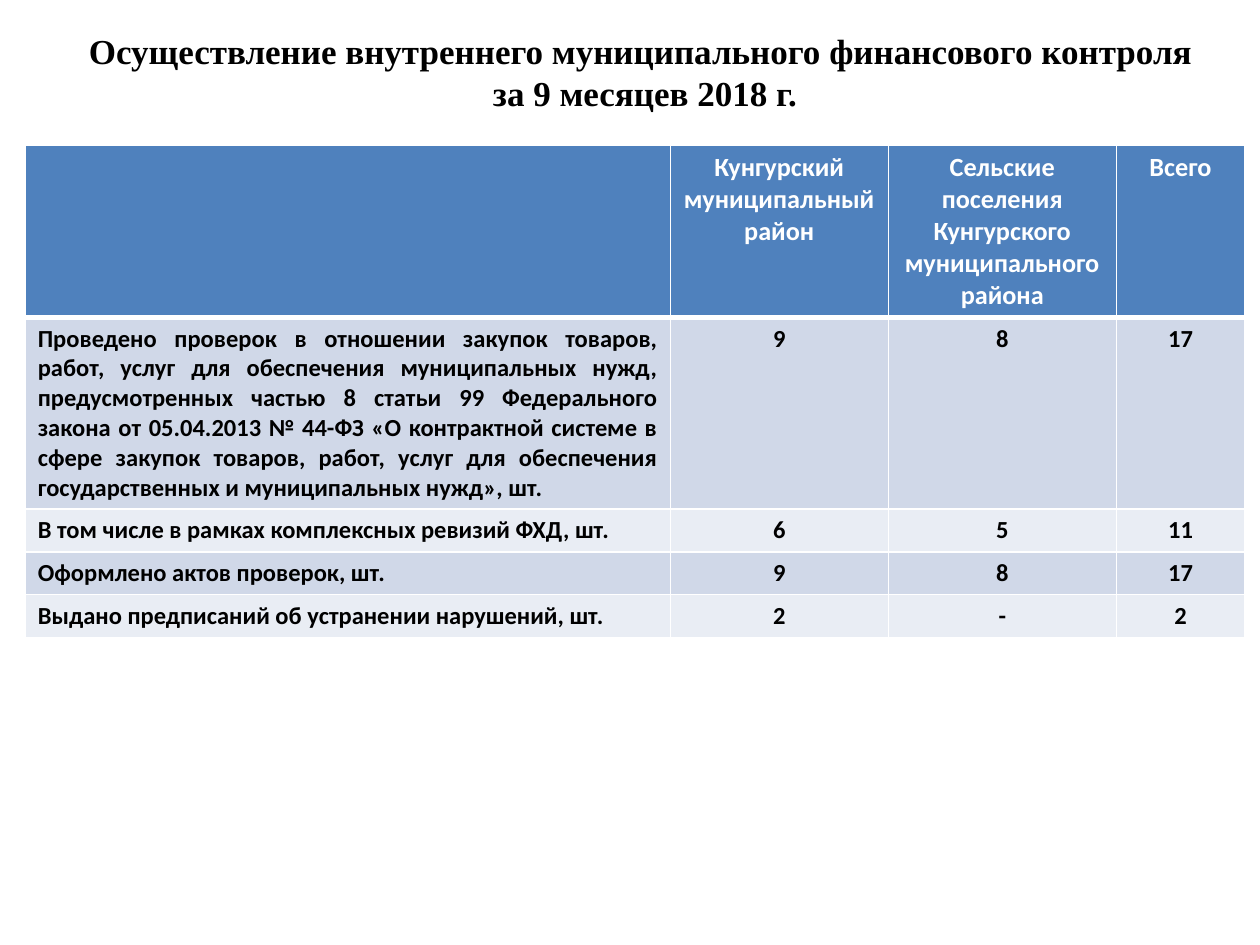
from lxml import etree
from pptx import Presentation
from pptx.dml.color import RGBColor
from pptx.enum import text
from pptx.oxml import ns
from pptx.util import Inches, Pt

WHITE = RGBColor(0xFF, 0xFF, 0xFF)
BLACK = RGBColor(0, 0, 0)
BLUE = RGBColor(0x4F, 0x81, 0xBD)
BANDS = [RGBColor(0xD0, 0xD8, 0xE8), RGBColor(0xE9, 0xED, 0xF4)]
ALIGN = text.PP_ALIGN

TITLE = "Осуществление внутреннего муниципального финансового контроля \vза 9 месяцев 2018 г."
ROWS = [
    ("", "Кунгурский муниципальный район",
     "Сельские поселения Кунгурского муниципального района", "Всего"),
    ("Проведено проверок в отношении закупок товаров, работ, услуг для обеспечения "
     "муниципальных нужд, предусмотренных частью 8 статьи 99 Федерального закона "
     "от 05.04.2013 № 44-ФЗ «О контрактной системе в сфере закупок товаров, работ, "
     "услуг для обеспечения государственных и муниципальных нужд», шт.", "9", "8", "17"),
    ("В том числе в рамках комплексных ревизий ФХД, шт.", "6", "5", "11"),
    ("Оформлено актов проверок, шт.", "9", "8", "17"),
    ("Выдано предписаний об устранении нарушений, шт.", "2", "-", "2"),
]
WIDTHS = [5.12, 1.73, 1.81, 1.02]
HEIGHTS = [1.37, 1.52, 0.34, 0.34, 0.34]


def style(p, font, size, color, align):
    p.alignment = align
    p.font.name = font
    p.font.size = Pt(size)
    p.font.bold = True
    p.font.color.rgb = color


def add_borders(cell, bottom):
    tcPr = cell._tc.get_or_add_tcPr()
    for i, (side, width) in enumerate([("L", 1), ("R", 1), ("T", 1), ("B", bottom)]):
        ln = etree.Element(ns.qn(f"a:ln{side}"), w=str(Pt(width)))
        fill = etree.SubElement(ln, ns.qn("a:solidFill"))
        etree.SubElement(fill, ns.qn("a:srgbClr"), val=str(WHITE))
        tcPr.insert(i, ln)


prs = Presentation()
prs.slide_width, prs.slide_height = Inches(10), Inches(7.5)
s = prs.slides.add_slide(prs.slide_layouts[6])

tf = s.shapes.add_textbox(Inches(0.51), Inches(0.13), Inches(9.22), Inches(0.87)).text_frame
tf.word_wrap = True
tf.vertical_anchor = text.MSO_ANCHOR.MIDDLE
tf.text = TITLE
style(tf.paragraphs[0], "Times New Roman", 20, BLACK, ALIGN.CENTER)

table = s.shapes.add_table(len(ROWS), len(WIDTHS), Inches(0.2), Inches(1.15),
                           Inches(sum(WIDTHS)), Inches(sum(HEIGHTS))).table
for column, width in zip(table.columns, WIDTHS):
    column.width = Inches(width)
for row, height in zip(table.rows, HEIGHTS):
    row.height = Inches(height)

for i, row in enumerate(ROWS):
    header = i == 0
    for j, value in enumerate(row):
        cell = table.cell(i, j)
        cell.text = value
        cell.fill.solid()
        cell.fill.fore_color.rgb = BLUE if header else BANDS[(i - 1) % 2]
        add_borders(cell, 3 if header else 1)
        if j or header:
            align = ALIGN.CENTER
        else:
            align = ALIGN.JUSTIFY if i == 1 else ALIGN.LEFT
        style(cell.text_frame.paragraphs[0], "Calibri", 15 if header else 14,
              WHITE if header else BLACK, align)

prs.save("out.pptx")
